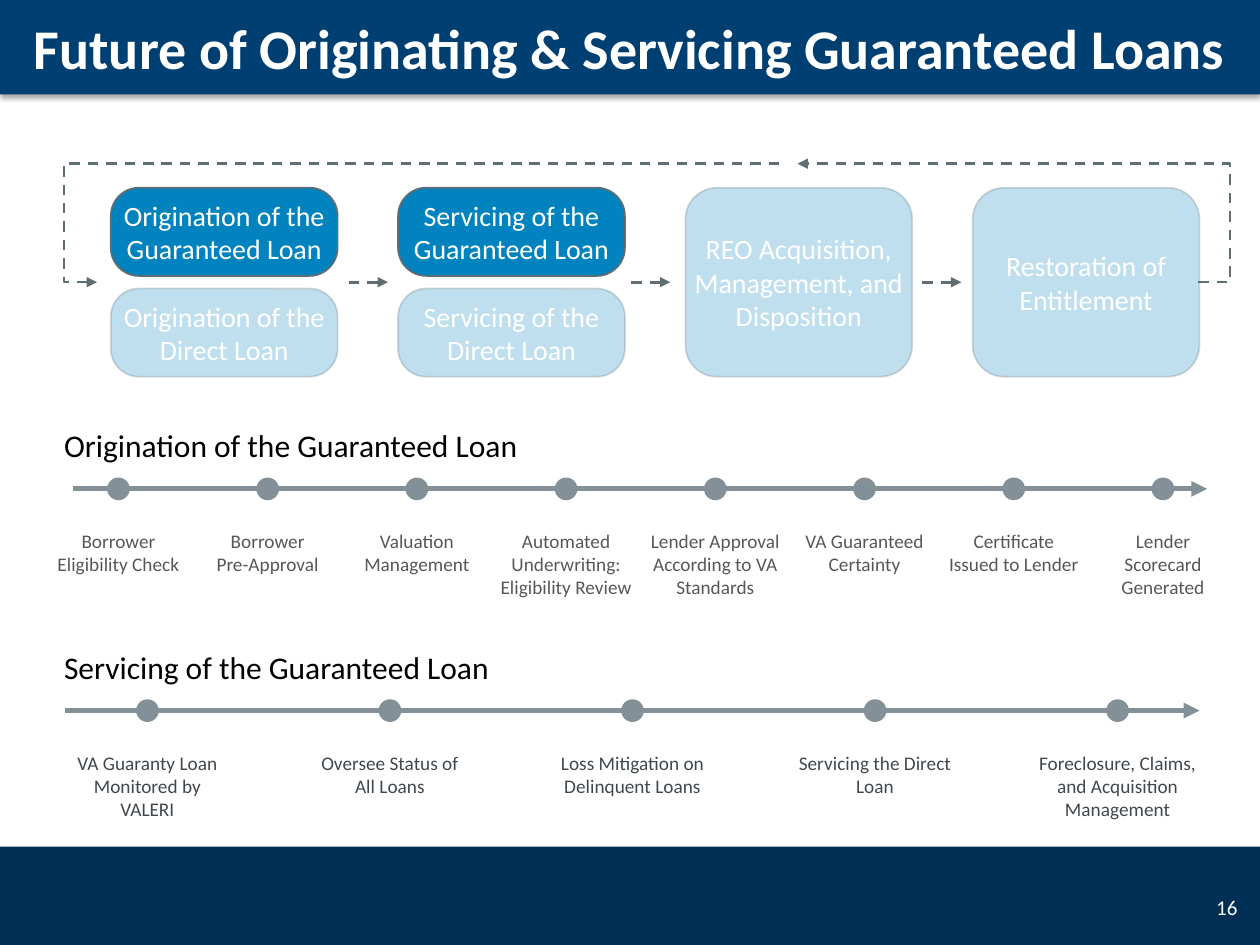
from dataclasses import dataclass

import pptx
import pptx.dml.color
import pptx.enum.shapes
import pptx.enum.text
import pptx.oxml
import pptx.oxml.ns
import pptx.util
from pptx.util import Inches, Pt

SHAPE = pptx.enum.shapes.MSO_SHAPE
CONNECTOR = pptx.enum.shapes.MSO_CONNECTOR
ALIGN = pptx.enum.text.PP_ALIGN
ANCHOR = pptx.enum.text.MSO_ANCHOR
qn = pptx.oxml.ns.qn


@dataclass(frozen=True)
class Theme:
    font: str = "Calibri"
    header: str = "003F72"
    footer: str = "002F56"
    stage: str = "0083BE"
    outline: str = "606D73"
    timeline: str = "839097"
    origination_label: str = "575757"
    servicing_label: str = "40484D"
    white: str = "FFFFFF"
    black: str = "000000"
    title_size: int = 32
    heading_size: int = 18
    stage_size: int = 16
    number_size: int = 12
    label_size: int = 11


THEME = Theme()

STAGE_LEFT, STAGE_PITCH, STAGE_WIDTH = 0.88, 2.28, 1.8
STAGE_TOP, STAGE_HEIGHT, HALF_HEIGHT = 1.49, 1.5, 0.7
LOOP_Y, FLOW_Y = 1.3, 2.24

# column, row (None spans both rows), wording
STAGES = [
    (0, 0, "Origination of the Guaranteed Loan"),
    (0, 1, "Origination of the Direct Loan"),
    (1, 0, "Servicing of the Guaranteed Loan"),
    (1, 1, "Servicing of the Direct Loan"),
    (2, None, "REO Acquisition, Management, and Disposition"),
    (3, None, "Restoration of Entitlement"),
]
ORIGINATION_STEPS = [
    "Borrower Eligibility Check",
    "Borrower\nPre-Approval",
    "Valuation Management",
    "Automated Underwriting: Eligibility Review",
    "Lender Approval According to VA Standards",
    "VA Guaranteed Certainty",
    "Certificate Issued to Lender",
    "Lender Scorecard Generated",
]
SERVICING_STEPS = [
    "VA Guaranty Loan Monitored by VALERI",
    "Oversee Status of\nAll Loans",
    "Loss Mitigation on Delinquent Loans",
    "Servicing the Direct Loan",
    "Foreclosure, Claims, and Acquisition Management",
]


def rgb(color):
    return pptx.dml.color.RGBColor.from_string(color)


def drawing_xml(tag, content="", **attributes):
    listed = "".join(f' {key}="{value}"' for key, value in attributes.items())
    return pptx.oxml.parse_xml(
        f'<a:{tag} {pptx.oxml.ns.nsdecls("a")}{listed}>{content}</a:{tag}>')


def write(shape, text, *, size, color, align=ALIGN.CENTER, bold=False,
          anchor=ANCHOR.MIDDLE, inset=None):
    frame = shape.text_frame
    frame.word_wrap = True
    frame.vertical_anchor = anchor
    if inset is not None:
        frame.margin_left = frame.margin_right = Inches(inset)
        frame.margin_top = frame.margin_bottom = Inches(inset)
    frame.text = text
    for paragraph in frame.paragraphs:
        paragraph.alignment = align
        font = paragraph.font
        font.name, font.size, font.bold = THEME.font, Pt(size), bold
        font.color.rgb = rgb(color)


def add_text(slide, box, text, **style):
    write(slide.shapes.add_textbox(*map(Inches, box)), text, **style)


def add_filled(slide, kind, box, color):
    shape = slide.shapes.add_shape(kind, *map(Inches, box))
    shape.shadow.inherit = False
    shape.fill.solid()
    shape.fill.fore_color.rgb = rgb(color)
    shape.line.fill.background()
    return shape


def add_bands(slide):
    add_filled(slide, SHAPE.RECTANGLE, (0, 6.72, 10, 0.78), THEME.footer)
    header = add_filled(slide, SHAPE.RECTANGLE, (0, 0, 10, 0.75), THEME.header)
    header._element.spPr.find(qn("a:effectLst")).append(drawing_xml(
        "outerShdw", '<a:srgbClr val="000000"><a:alpha val="35000"/></a:srgbClr>',
        blurRad=Pt(3.1), dist=Pt(1.8), dir=5400000, rotWithShape=0))


def add_title(slide, text):
    title = slide.shapes.title
    title.left, title.top, title.width, title.height = map(Inches, (0, 0, 10, 0.75))
    write(title, text, size=THEME.title_size, color=THEME.white, bold=True)
    slide.shapes._spTree.append(title._element)  # in front of the header band


def add_stage(slide, column, row, text):
    """Draw a stage box; only the guaranteed-loan row is at full strength."""
    left = STAGE_LEFT + column * STAGE_PITCH
    top = STAGE_TOP + (row or 0) * (STAGE_HEIGHT - HALF_HEIGHT)
    height = STAGE_HEIGHT if row is None else HALF_HEIGHT
    stage = add_filled(slide, SHAPE.ROUNDED_RECTANGLE,
                       (left, top, STAGE_WIDTH, height), THEME.stage)
    if row is not None:
        stage.adjustments[0] = 0.32
    stage.line.color.rgb = rgb(THEME.outline)
    stage.line.width = Pt(1)
    if row != 0:
        for color in stage._element.spPr.iter(qn("a:srgbClr")):
            color.append(drawing_xml("alpha", val=25000))
    write(stage, text, size=THEME.stage_size, color=THEME.white, inset=0)


def add_arrow(slide, start, end, *, color, width, dashed=False,
              arrowhead="tailEnd", bend=None):
    """Draw an arrow; bend is the x position of an elbow's upright part."""
    kind = CONNECTOR.STRAIGHT if bend is None else CONNECTOR.ELBOW
    arrow = slide.shapes.add_connector(kind, *map(Inches, start + end))
    arrow.line.color.rgb = rgb(color)
    arrow.line.width = Pt(width)
    if dashed:
        arrow.line.dash_style = pptx.enum.dml.MSO_LINE.DASH
    properties = arrow._element.spPr
    properties.find(qn("a:ln")).append(drawing_xml(arrowhead, type="triangle"))
    properties.append(drawing_xml("effectLst"))
    if bend is not None:
        ratio = round((bend - start[0]) / (end[0] - start[0]) * 100000)
        geometry = properties.find(qn("a:prstGeom"))
        for old in geometry.findall(qn("a:avLst")):
            geometry.remove(old)
        guide = f'<a:gd name="adj1" fmla="val {ratio}"/>'
        geometry.append(drawing_xml("avLst", guide))


def add_process(slide):
    for stage in STAGES:
        add_stage(slide, *stage)
    flow = dict(color=THEME.outline, width=1.5, dashed=True)
    for x in (2.77, 5.01, 7.32):
        add_arrow(slide, (x, FLOW_Y), (x + 0.31, FLOW_Y), **flow)
    add_arrow(slide, (9.51, FLOW_Y), (6.33, LOOP_Y), bend=9.76, **flow)
    add_arrow(slide, (0.77, FLOW_Y), (6.24, LOOP_Y), bend=0.51,
              arrowhead="headEnd", **flow)


def add_timeline(slide, heading, steps, *, y, left, first, last, label_width,
                 label_color):
    """Draw a headed arrow with dots evenly spread from first to last."""
    add_text(slide, (0.41, y - 0.55, 4.19, 0.4), heading, size=THEME.heading_size,
             color=THEME.black, align=ALIGN.LEFT, anchor=ANCHOR.TOP)
    add_arrow(slide, (left, y), (left + 9, y), color=THEME.timeline, width=3)
    dot = 0.18
    pitch = (last - first) / (len(steps) - 1)
    for index, step in enumerate(steps):
        center = first + index * pitch
        add_text(slide, (center - label_width / 2, y + 0.32, label_width, 0.56), step,
                 size=THEME.label_size, color=label_color, anchor=ANCHOR.TOP, inset=0)
        add_filled(slide, SHAPE.OVAL, (center - dot / 2, y - dot / 2, dot, dot),
                   THEME.timeline)


def main():
    deck = pptx.Presentation()
    deck.slide_width, deck.slide_height = Inches(10), Inches(7.5)
    slide = deck.slides.add_slide(deck.slide_layouts[5])
    add_bands(slide)
    add_text(slide, (7.59, 7, 2.33, 0.4), "16", size=THEME.number_size,
             color=THEME.white, align=ALIGN.RIGHT)
    add_title(slide, "Future of Originating & Servicing Guaranteed Loans")
    add_process(slide)
    add_timeline(slide, "Origination of the Guaranteed Loan", ORIGINATION_STEPS,
                 y=3.88, left=0.58, first=0.94, last=9.23, label_width=1.05,
                 label_color=THEME.origination_label)
    add_timeline(slide, "Servicing of the Guaranteed Loan", SERVICING_STEPS,
                 y=5.64, left=0.52, first=1.17, last=8.87, label_width=1.3,
                 label_color=THEME.servicing_label)
    deck.save("out.pptx")


if __name__ == "__main__":
    main()
